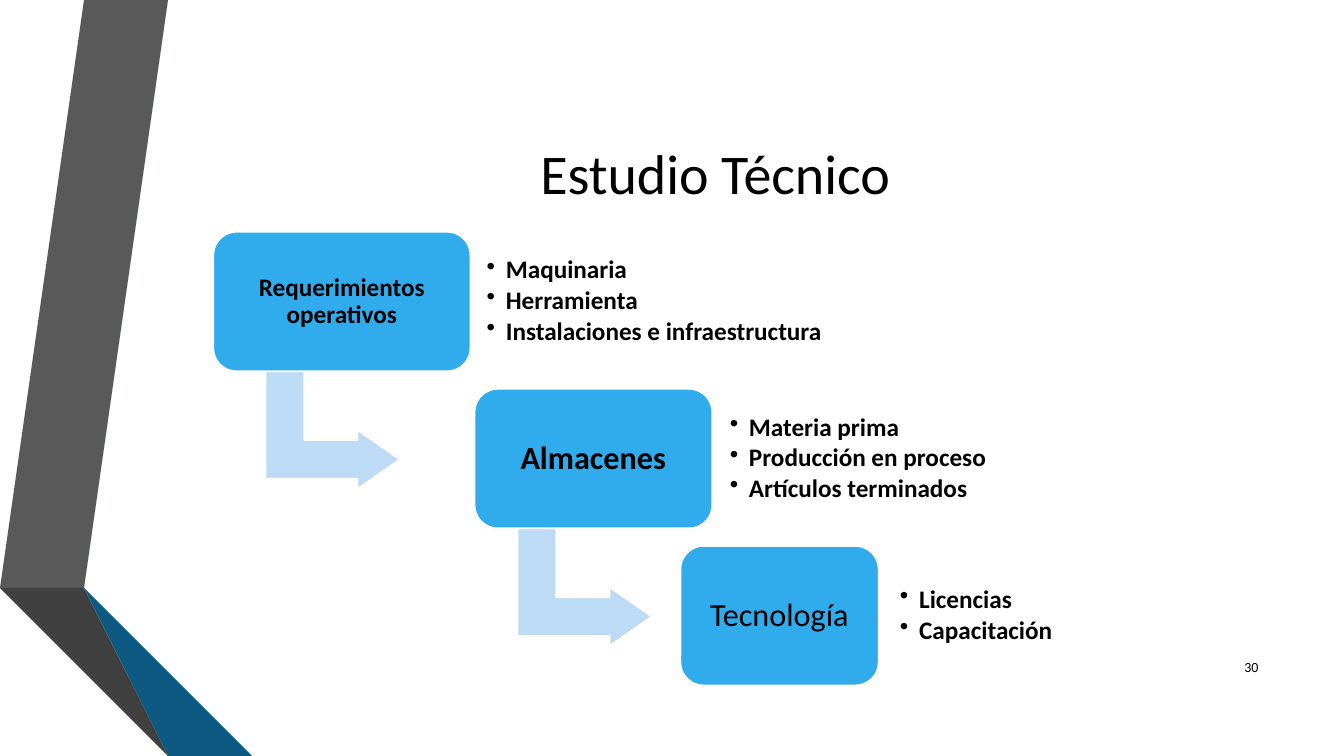
from dataclasses import dataclass
from typing import Optional

from lxml.etree import SubElement
from pptx import Presentation
from pptx.dml.color import RGBColor
from pptx.enum.shapes import MSO_SHAPE
from pptx.enum.text import MSO_ANCHOR, PP_ALIGN
from pptx.oxml.ns import qn
from pptx.util import Inches, Pt

# The slide is a grid of 16 columns by 9 rows of square cells
SLIDE_WIDTH, SLIDE_HEIGHT = Inches(13.333), Inches(7.5)
COLUMNS = 16
CELL = SLIDE_WIDTH / COLUMNS

FONT = "Calibri"
BLACK = RGBColor(0x00, 0x00, 0x00)
WHITE = RGBColor(0xFF, 0xFF, 0xFF)
BLUE = RGBColor(0x30, 0xAC, 0xEC)
DEEP_BLUE = RGBColor(0x12, 0x87, 0xC3)
NAVY = RGBColor(0x0C, 0x5A, 0x82)
PALE_BLUE = RGBColor(0xBE, 0xDB, 0xF6)
GREY = RGBColor(0x59, 0x59, 0x59)
CHARCOAL = RGBColor(0x40, 0x40, 0x40)
DARK = RGBColor(0x26, 0x26, 0x26)

# Steps, in columns and rows
FIRST_TOP, STEP_PITCH, BOX_HEIGHT = 2.76, 1.87, 1.66
LIST_DROP, LIST_HEIGHT = 0.16, 1.34
ARROW_DROP, ARROW_WIDTH, ARROW_HEIGHT = 1.56, 1.4, 1.6


@dataclass
class Ribbon:
    color: RGBColor
    points: list[tuple[float, float]]


@dataclass
class Step:
    title: str
    left: float
    width: float
    size: int
    bold: bool
    items: list[str]
    list_left: float
    list_width: float
    list_inset: float
    arrow_left: Optional[float] = None


RIBBONS = [
    Ribbon(BLUE, [(0.6, 6.94), (0.92, 7), (2.08, 0), (1.74, 0)]),
    Ribbon(GREY, [(1.67, 0), (1.33, 0), (0.19, 6.88), (0.53, 6.92)]),
    Ribbon(DARK, [(0.19, 6.88), (1.74, 9), (1.81, 9)]),
    Ribbon(NAVY, [(0.6, 6.95), (2.5, 9), (2.57, 9)]),
    Ribbon(DEEP_BLUE, [(0.6, 6.94), (2.57, 9), (3.4, 9), (0.92, 7)]),
    Ribbon(CHARCOAL, [(2.42, 9), (0.58, 7), (0.53, 6.92), (0.19, 6.88), (1.81, 9)]),
]

STEPS = [
    Step("Requerimientos operativos", 2.54, 3.06, 18, True,
         ["Maquinaria", "Herramienta", "Instalaciones e infraestructura"],
         5.71, 5.8, 0.07, arrow_left=3.26),
    Step("Almacenes", 5.65, 2.83, 23, True,
         ["Materia prima", "Producción en proceso", "Artículos terminados"],
         8.57, 4.67, 0.1, arrow_left=6.26),
    Step("Tecnología", 8.1, 2.36, 23, False,
         ["Licencias", "Capacitación"], 10.63, 2.74, 0.07),
]


def grid(*cells: float) -> list[int]:
    """Turn columns or rows into slide lengths."""
    return [round(cell * CELL) for cell in cells]


def paint(shape, color: RGBColor, outlined: bool = False) -> None:
    shape.shadow.inherit = False
    shape.fill.solid()
    shape.fill.fore_color.rgb = color
    if outlined:
        shape.line.color.rgb = WHITE
        shape.line.width = Pt(1.25)
    else:
        shape.line.fill.background()


def add_bullet(paragraph) -> None:
    properties = paragraph._p.get_or_add_pPr()
    indent = Inches(0.19)
    properties.set("marL", str(indent))
    properties.set("indent", str(-indent))
    SubElement(properties, qn("a:buChar")).set("char", "•")


def write(shape, lines: list[str], *, size: float, bold: bool = False,
          align: PP_ALIGN = PP_ALIGN.LEFT, inset: Optional[float] = None,
          spacing: float = 1.0, after: float = 0, bullets: bool = False) -> None:
    """Fill a shape, text box or placeholder with formatted paragraphs."""
    frame = shape.text_frame
    frame.word_wrap = True
    frame.vertical_anchor = MSO_ANCHOR.MIDDLE
    if inset is not None:
        frame.margin_left = frame.margin_right = Inches(inset)
        frame.margin_top = frame.margin_bottom = Inches(inset)
    frame.text = "\n".join(lines)
    for paragraph in frame.paragraphs:
        paragraph.alignment = align
        paragraph.line_spacing = spacing
        paragraph.space_after = Pt(after)
        if bullets:
            add_bullet(paragraph)
        font = paragraph.runs[0].font
        font.name, font.size, font.bold = FONT, Pt(size), bold
        font.color.rgb = BLACK


def add_ribbon(slide, ribbon: Ribbon) -> None:
    start, *others = ribbon.points
    builder = slide.shapes.build_freeform(*start, scale=CELL)
    builder.add_line_segments(others, close=True)
    paint(builder.convert_to_shape(), ribbon.color)


def add_step(slide, step: Step, top: float) -> None:
    # Bent arrow towards the next step
    if step.arrow_left is not None:
        arrow = slide.shapes.add_shape(
            MSO_SHAPE.BENT_UP_ARROW,
            *grid(step.arrow_left, top + ARROW_DROP, ARROW_WIDTH, ARROW_HEIGHT))
        arrow.rotation = 90
        for index, value in enumerate((0.33, 0.25, 0.36)):
            arrow.adjustments[index] = value
        paint(arrow, PALE_BLUE, outlined=True)

    # Named box
    box = slide.shapes.add_shape(
        MSO_SHAPE.ROUNDED_RECTANGLE, *grid(step.left, top, step.width, BOX_HEIGHT))
    paint(box, BLUE, outlined=True)
    write(box, [step.title], size=step.size, bold=step.bold,
          align=PP_ALIGN.CENTER, inset=0.07, spacing=0.9)

    # Bulleted list beside the box
    items = slide.shapes.add_textbox(
        *grid(step.list_left, top + LIST_DROP, step.list_width, LIST_HEIGHT))
    write(items, step.items, size=18, bold=True, inset=step.list_inset,
          spacing=0.9, after=2.5, bullets=True)


def main() -> None:
    presentation = Presentation()
    presentation.slide_width, presentation.slide_height = SLIDE_WIDTH, SLIDE_HEIGHT
    slide = presentation.slides.add_slide(presentation.slide_layouts[5])

    # Folded ribbons on the left
    for ribbon in RIBBONS:
        add_ribbon(slide, ribbon)

    # Title
    title = slide.shapes.title
    title.left, title.top, title.width, title.height = grid(1.94, 0.9, 13.15, 2.3)
    write(title, ["Estudio Técnico"], size=40, align=PP_ALIGN.CENTER)

    # Staircase of steps
    for index, step in enumerate(STEPS):
        add_step(slide, step, FIRST_TOP + index * STEP_PITCH)

    # Page number
    number = slide.shapes.add_textbox(*grid(14.38, 7.7, 0.72, 0.48))
    write(number, ["30"], size=10, align=PP_ALIGN.RIGHT)

    presentation.save("out.pptx")


if __name__ == "__main__":
    main()
